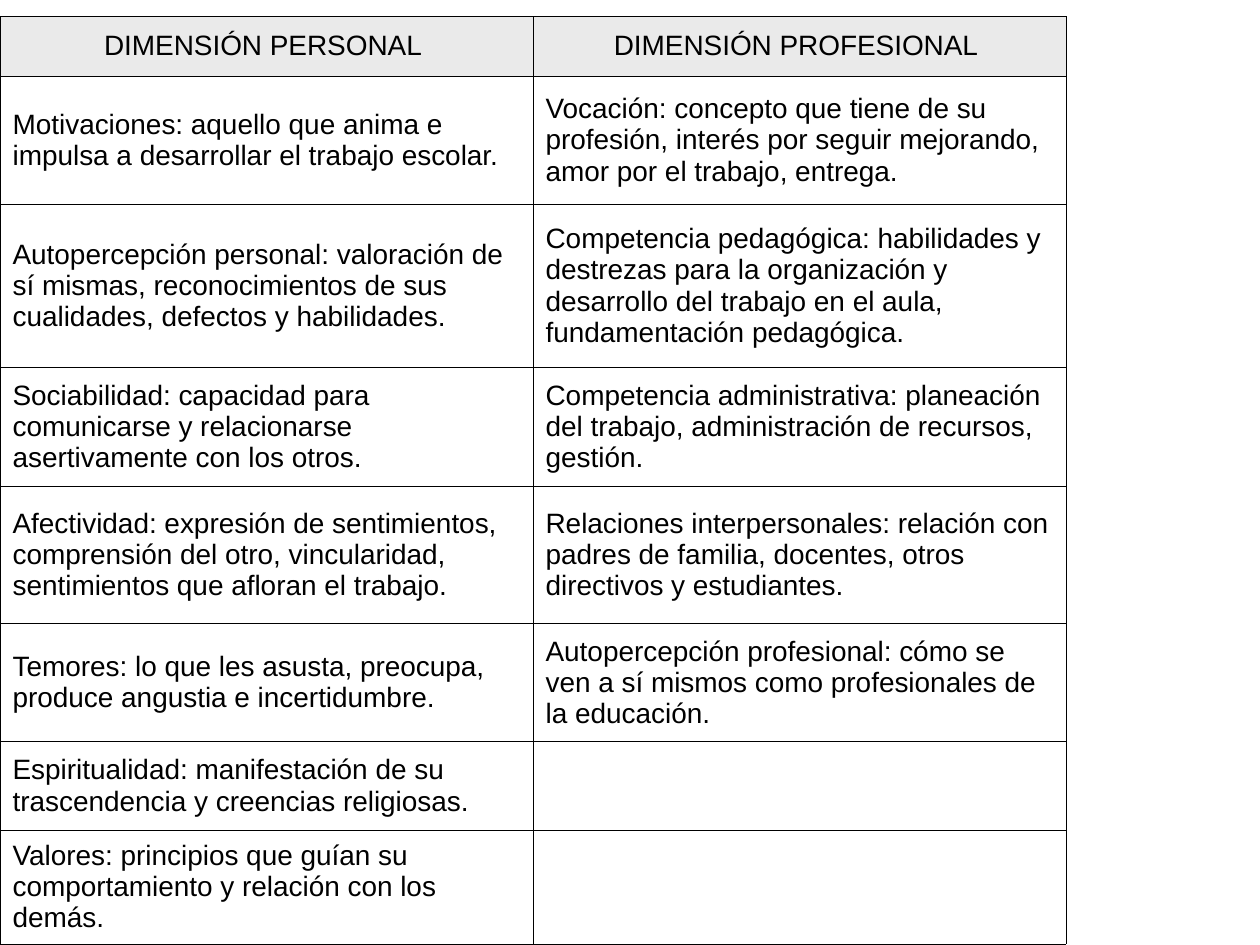
from dataclasses import dataclass

import pptx
import pptx.dml.color
import pptx.enum.text
import pptx.oxml
import pptx.oxml.ns
import pptx.util

Pt = pptx.util.Pt
Color = pptx.dml.color.RGBColor


@dataclass(frozen=True)
class Theme:
    font: str = "Arial"
    text_size: float = 16
    border_width: float = 0.3
    ink: str = "000000"
    header_fill: str = "EAEAEA"


@dataclass(frozen=True)
class DimensionRow:
    height: float
    personal: str
    professional: str = ""
    is_header: bool = False


THEME = Theme()
TABLE_TOP = 9.4
COLUMN_WIDTH = 304.6
ROWS = [
    DimensionRow(34, "DIMENSIÓN PERSONAL ", "DIMENSIÓN PROFESIONAL ", is_header=True),
    DimensionRow(
        73.5,
        "Motivaciones: aquello que anima e impulsa a desarrollar el trabajo escolar.",
        "Vocación: concepto que tiene de su profesión, interés por seguir mejorando, "
        "amor por el trabajo, entrega.",
    ),
    DimensionRow(
        93,
        "Autopercepción personal: valoración de sí mismas, reconocimientos de sus "
        "cualidades, defectos y habilidades.",
        "Competencia pedagógica: habilidades y destrezas para la organización y "
        "desarrollo del trabajo en el aula, fundamentación pedagógica.",
    ),
    DimensionRow(
        68,
        "Sociabilidad: capacidad para comunicarse y relacionarse asertivamente con los otros.",
        "Competencia administrativa: planeación del trabajo, administración de recursos, gestión.",
    ),
    DimensionRow(
        78.5,
        "Afectividad: expresión de sentimientos, comprensión del otro, vincularidad, "
        "sentimientos que afloran el trabajo.",
        "Relaciones interpersonales: relación con padres de familia, docentes, otros "
        "directivos y estudiantes.",
    ),
    DimensionRow(
        67.5,
        "Temores: lo que les asusta, preocupa, produce angustia e incertidumbre.",
        "Autopercepción profesional: cómo se ven a sí mismos como profesionales de la educación.",
    ),
    DimensionRow(
        50.5,
        "Espiritualidad: manifestación de su trascendencia y creencias religiosas.",
    ),
    DimensionRow(
        65,
        "Valores: principios que guían su comportamiento y relación con los demás.",
    ),
]


def add_borders(cell) -> None:
    """Line all four sides; the border elements must precede the cell's fill."""
    properties = cell._tc.get_or_add_tcPr()
    for index, side in enumerate(("lnL", "lnR", "lnT", "lnB")):
        border = pptx.oxml.parse_xml(
            f'<a:{side} {pptx.oxml.ns.nsdecls("a")} w="{int(Pt(THEME.border_width))}">'
            f'<a:solidFill><a:srgbClr val="{THEME.ink}"/></a:solidFill></a:{side}>'
        )
        properties.insert(index, border)


def fill_cell(cell, text: str, is_header: bool) -> None:
    cell.vertical_anchor = pptx.enum.text.MSO_ANCHOR.MIDDLE
    if is_header:
        cell.fill.solid()
        cell.fill.fore_color.rgb = Color.from_string(THEME.header_fill)
    else:
        cell.fill.background()
    add_borders(cell)

    para = cell.text_frame.paragraphs[0]
    para.text = text
    if is_header:
        para.alignment = pptx.enum.text.PP_ALIGN.CENTER
    for span in para.runs:
        span.font.name = THEME.font
        span.font.size = Pt(THEME.text_size)
        span.font.bold = False
        span.font.color.rgb = Color.from_string(THEME.ink)


def add_dimension_table(page, rows: list[DimensionRow]) -> None:
    height = sum(row.height for row in rows)
    table = page.shapes.add_table(
        len(rows), 2, Pt(0), Pt(TABLE_TOP), Pt(2 * COLUMN_WIDTH), Pt(height)
    ).table
    table.first_row = False
    table.horz_banding = False
    for column in table.columns:
        column.width = Pt(COLUMN_WIDTH)
    for table_row, row in zip(table.rows, rows):
        table_row.height = Pt(row.height)
        for cell, text in zip(table_row.cells, (row.personal, row.professional)):
            fill_cell(cell, text, row.is_header)


def main() -> None:
    deck = pptx.Presentation()
    deck.slide_width, deck.slide_height = Pt(720), Pt(540)
    page = deck.slides.add_slide(deck.slide_layouts[6])
    add_dimension_table(page, ROWS)
    deck.save("out.pptx")


if __name__ == "__main__":
    main()
